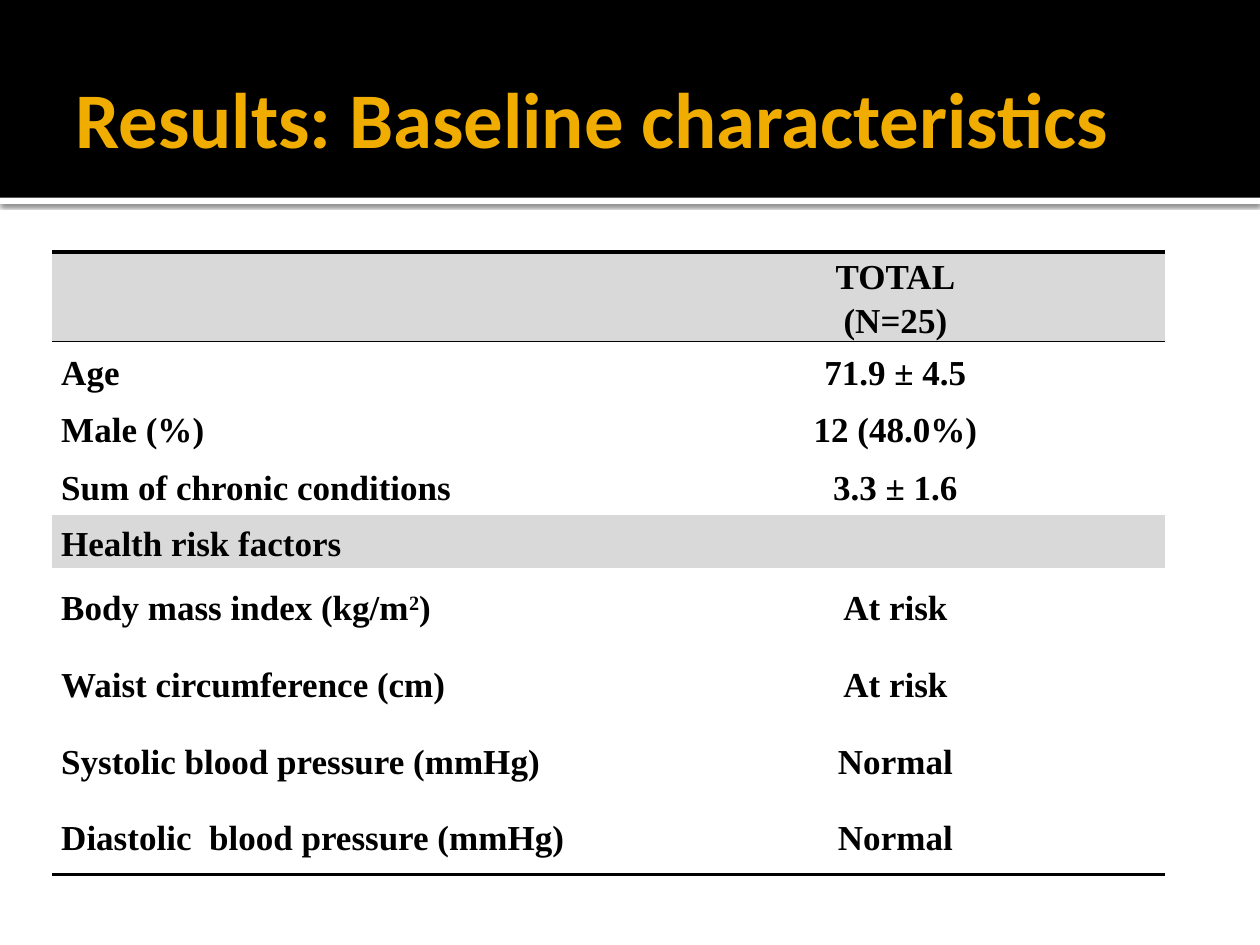
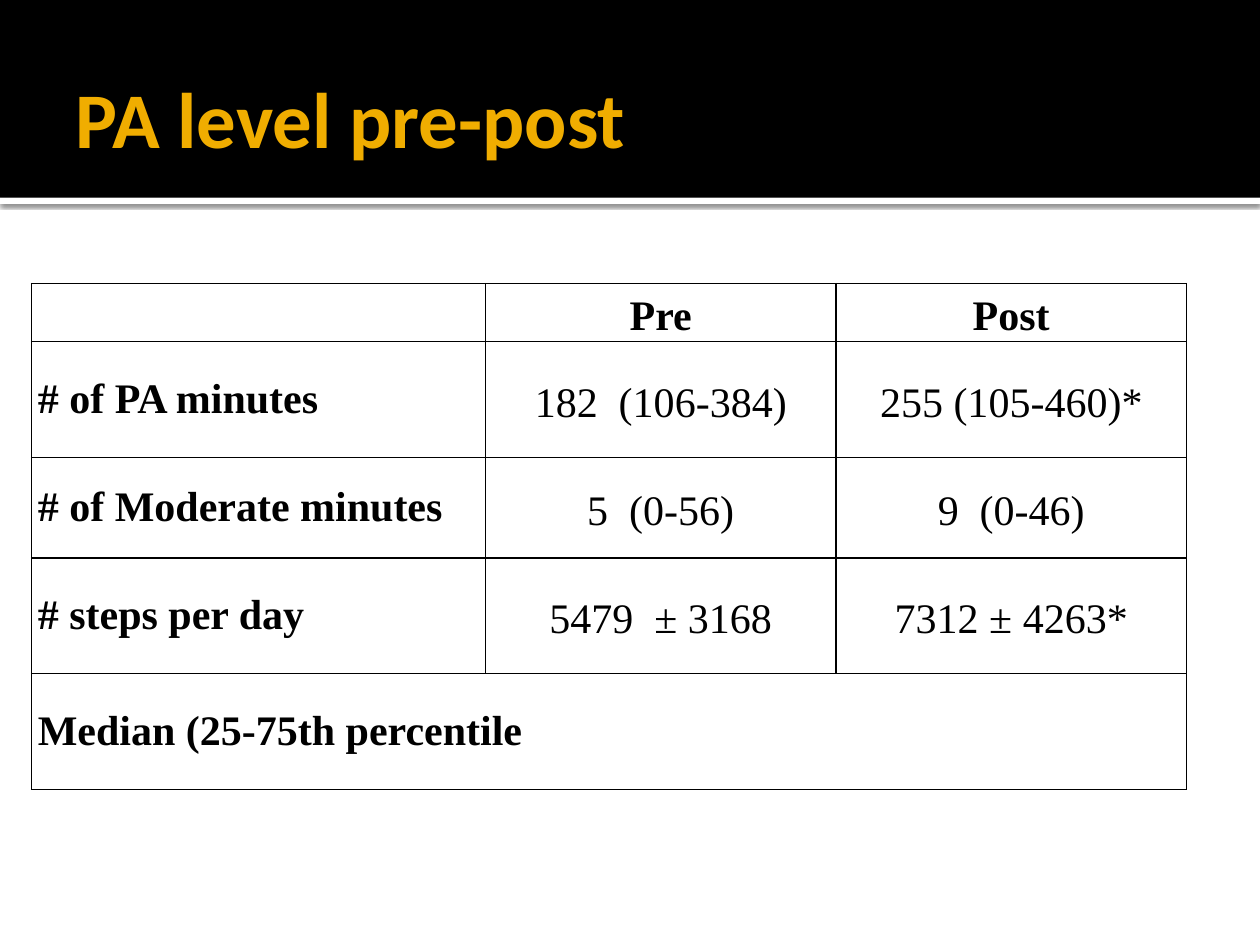
from lxml import etree
from pptx import Presentation
from pptx.dml.color import RGBColor
from pptx.enum import shapes, text
from pptx.oxml import ns
from pptx.util import Pt

BLACK = RGBColor(0, 0, 0)
WHITE = RGBColor(0xFF, 0xFF, 0xFF)
GOLD = RGBColor(0xF0, 0xAD, 0x00)
GREY = RGBColor(0xD9, 0xD9, 0xD9)
TITLE_FONT, TABLE_FONT = "Calibri", "Times New Roman"
WIDTH, HEIGHT, BAND_HEIGHT = 720, 540, 113
NO_STYLE = "{2D5ABB26-0587-4C30-8999-92F81FD0307C}"

BASELINE = {
    "title": "Results: Baseline characteristics",
    "at": (30, 144), "cols": [327.4, 308.6], "size": 20,
    "heights": [43.8, 33.1, 33.1, 33.1, 30.2] + [43.8] * 4,
    "rows": [
        ("", "TOTAL\n(N=25)"),
        ("Age", "71.9 ± 4.5"),
        ("Male (%)", "12 (48.0%)"),
        ("Sum of chronic conditions", "3.3 ± 1.6"),
        ("Health risk factors", ""),
        ("Body mass index (kg/m^2^)", "At risk"),
        ("Waist circumference (cm)", "At risk"),
        ("Systolic blood pressure (mmHg)", "Normal"),
        ("Diastolic  blood pressure (mmHg)", "Normal"),
    ],
    "shaded": (0, 4), "rules": {0: {"T": 2.25, "B": 1}, 1: {"T": 1}, 8: {"B": 2.25}},
    "label_spacing": 1.15, "label_inset": 5, "bold_values": True,
}
ACTIVITY = {
    "title": "PA level pre-post",
    "at": (18, 162), "cols": [259.4, 200.3, 200.3], "size": 24,
    "heights": [33.1, 66.3, 57.4, 66.3, 66.3],
    "rows": [
        ("", "Pre", "Post"),
        ("# of PA minutes", "182  (106-384)", "255 (105-460)*"),
        ("# of Moderate minutes", "5  (0-56)", "9  (0-46)"),
        ("# steps per day", "5479  ± 3168", "7312 ± 4263*"),
        ("Median (25-75th percentile",),
    ],
    "shaded": (), "rules": {i: dict.fromkeys("LRTB", 1) for i in range(5)},
    "label_spacing": 1, "label_inset": 3.6, "bold_values": False,
}


def add_effects(sp, xml=""):
    sp._element.spPr.append(etree.fromstring(
        f'<a:effectLst {ns.nsdecls("a")}>{xml}</a:effectLst>'))


def add_band(slide, top, height, color, depth, effects=""):
    sp = slide.shapes.add_shape(shapes.MSO_SHAPE.RECTANGLE, 0, Pt(top), Pt(WIDTH), Pt(height))
    sp.fill.solid()
    sp.fill.fore_color.rgb = color
    sp.line.fill.background()
    add_effects(sp, effects)
    slide.shapes._spTree.insert(depth, sp._element)


def add_title(slide, title):
    sp = slide.shapes.title
    sp.left, sp.top, sp.width, sp.height = Pt(36), Pt(21.6), Pt(648), Pt(90)
    tf = sp.text_frame
    tf.text = title
    tf.word_wrap = True
    tf.auto_size = text.MSO_AUTO_SIZE.NONE
    tf.vertical_anchor = text.MSO_ANCHOR.MIDDLE
    tf.margin_left = Pt(7.2)
    tf.margin_right = tf.margin_top = tf.margin_bottom = Pt(3.6)
    p = tf.paragraphs[0]
    p.alignment = text.PP_ALIGN.LEFT
    set_font(p.font, TITLE_FONT, 45, GOLD, True)


def set_font(font, name, size, color, bold):
    font.name, font.size, font.bold = name, Pt(size), bold
    font.color.rgb = color


def set_borders(cell, rules):
    tcPr = cell._tc.get_or_add_tcPr()
    for side in "LRTB":
        width = rules.get(side)
        line = (f'<a:solidFill><a:srgbClr val="{BLACK}"/></a:solidFill>'
                if width else "<a:noFill/>")
        tcPr.append(etree.fromstring(
            f'<a:ln{side} {ns.nsdecls("a")} w="{Pt(width or 0)}">{line}</a:ln{side}>'))


def fill_cell(cell, content, is_label, is_header, spec):
    cell.vertical_anchor = text.MSO_ANCHOR.MIDDLE
    cell.margin_top = cell.margin_bottom = 0
    inset = spec["label_inset"] if is_label or is_header else 5
    cell.margin_left = cell.margin_right = Pt(inset)
    tf = cell.text_frame
    for i, line in enumerate(content.split("\n")):
        p = tf.add_paragraph() if i else tf.paragraphs[0]
        p.alignment = text.PP_ALIGN.LEFT if is_label else text.PP_ALIGN.CENTER
        p.line_spacing = spec["label_spacing"] if is_label else 1.15
        bold = is_label or is_header or spec["bold_values"]
        set_font(p.font, TABLE_FONT, spec["size"], BLACK, bold)
        for j, part in enumerate(line.split("^")):
            if part:
                r = p.add_run()
                r.text = part
                if j % 2:
                    r.font._element.set("baseline", "30000")


def add_table(slide, spec):
    rows, cols, heights = spec["rows"], spec["cols"], spec["heights"]
    left, top = spec["at"]
    table = slide.shapes.add_table(len(rows), len(cols), Pt(left), Pt(top),
                                   Pt(sum(cols)), Pt(sum(heights))).table
    table.first_row = table.horz_banding = False
    table._tbl.tblPr.find(ns.qn("a:tableStyleId")).text = NO_STYLE
    for column, width in zip(table.columns, cols):
        column.width = Pt(width)
    for i, (row, height, contents) in enumerate(zip(table.rows, heights, rows)):
        row.height = Pt(height)
        for j, cell in enumerate(row.cells):
            set_borders(cell, spec["rules"].get(i, {}))
            if i in spec["shaded"]:
                cell.fill.solid()
                cell.fill.fore_color.rgb = GREY
            else:
                cell.fill.background()
            if j < len(contents):
                fill_cell(cell, contents[j], j == 0, i == 0, spec)
        if len(contents) < len(cols):
            table.cell(i, 0).merge(table.cell(i, len(cols) - 1))


def main():
    """Build the two result slides."""
    prs = Presentation()
    prs.slide_width, prs.slide_height = Pt(WIDTH), Pt(HEIGHT)
    shadow = (f'<a:outerShdw blurRad="{Pt(2.5)}" dist="{Pt(0.8)}" dir="5400000">'
              f'<a:srgbClr val="{BLACK}"><a:alpha val="60000"/></a:srgbClr></a:outerShdw>')
    for spec in (BASELINE, ACTIVITY):
        slide = prs.slides.add_slide(prs.slide_layouts[5])
        slide.background.fill.solid()
        slide.background.fill.fore_color.rgb = WHITE
        add_band(slide, BAND_HEIGHT, 3.6, WHITE, 2, shadow)
        add_band(slide, 0, BAND_HEIGHT, BLACK, 3)
        add_title(slide, spec["title"])
        add_table(slide, spec)
    prs.save("out.pptx")


if __name__ == "__main__":
    main()
